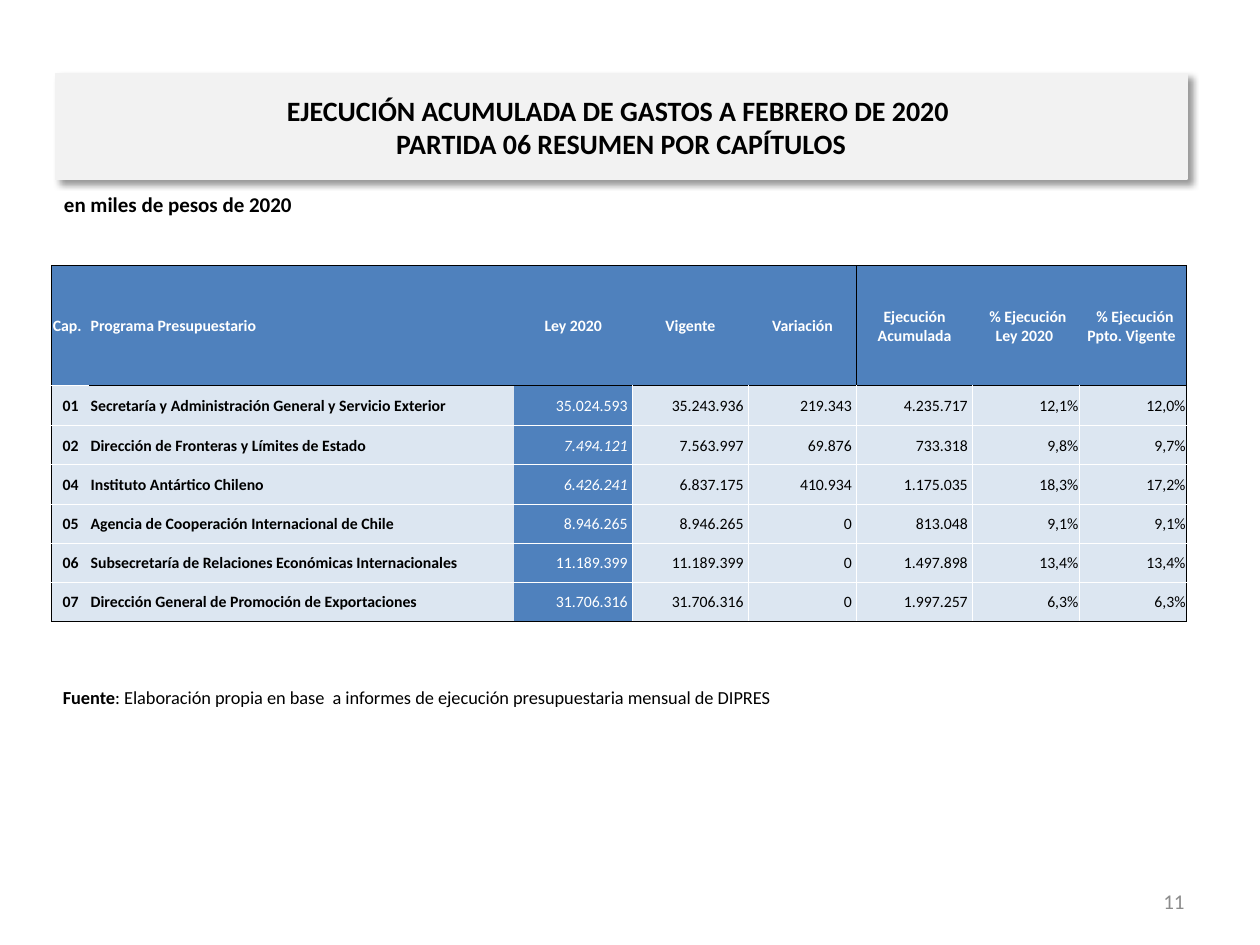
from dataclasses import dataclass
from typing import NamedTuple

from lxml import etree
from pptx import Presentation
from pptx.dml.color import RGBColor
from pptx.enum.text import MSO_ANCHOR, MSO_AUTO_SIZE, PP_ALIGN
from pptx.oxml.ns import qn
from pptx.util import Inches, Pt

LEFT, CENTER, RIGHT = PP_ALIGN.LEFT, PP_ALIGN.CENTER, PP_ALIGN.RIGHT
TOP, MIDDLE = MSO_ANCHOR.TOP, MSO_ANCHOR.MIDDLE
GROW = MSO_AUTO_SIZE.SHAPE_TO_FIT_TEXT
TITLE_ONLY = 5


@dataclass(frozen=True)
class Theme:
    font: str = "Calibri"
    black: str = "000000"
    white: str = "FFFFFF"
    gray: str = "8C8C8C"
    banner: str = "F2F2F2"
    accent: str = "4F81BD"
    pale: str = "DCE6F1"
    title_size: float = 16
    label_size: float = 12
    source_size: float = 10.5
    table_size: float = 9
    hairline: float = 0.5


class Box(NamedTuple):
    left: float
    top: float
    width: float
    height: float

    def emu(self) -> tuple:
        return tuple(Inches(v) for v in self)


class Column(NamedTuple):
    header: str
    width: float
    header_align: PP_ALIGN
    align: PP_ALIGN
    suffix: str = ""


class Chapter(NamedTuple):
    code: str
    program: str
    law: str
    current: str
    variation: str
    executed: str
    law_pct: str
    current_pct: str


THEME = Theme()
COLUMNS = [
    Column("Cap.", 0.3, LEFT, CENTER),
    Column("Programa Presupuestario", 3.37, LEFT, LEFT),
    Column("Ley 2020", 0.94, CENTER, RIGHT, " "),
    Column("Vigente", 0.92, CENTER, RIGHT, " "),
    Column("Variación", 0.86, CENTER, RIGHT, " "),
    Column("Ejecución Acumulada", 0.92, CENTER, RIGHT, " "),
    Column(" % Ejecución Ley 2020 ", 0.85, CENTER, RIGHT),
    Column(" % Ejecución Ppto. Vigente ", 0.85, CENTER, RIGHT),
]
CHAPTERS = [
    Chapter("01", "Secretaría y Administración General y Servicio Exterior",
            "35.024.593", "35.243.936", "219.343", "4.235.717", "12,1%", "12,0%"),
    Chapter("02", "Dirección de Fronteras y Límites de Estado",
            "7.494.121", "7.563.997", "69.876", "733.318", "9,8%", "9,7%"),
    Chapter("04", "Instituto Antártico Chileno",
            "6.426.241", "6.837.175", "410.934", "1.175.035", "18,3%", "17,2%"),
    Chapter("05", "Agencia de Cooperación Internacional de Chile",
            "8.946.265", "8.946.265", "0", "813.048", "9,1%", "9,1%"),
    Chapter("06", "Subsecretaría de Relaciones Económicas Internacionales",
            "11.189.399", "11.189.399", "0", "1.497.898", "13,4%", "13,4%"),
    Chapter("07", "Dirección General de Promoción de Exportaciones",
            "31.706.316", "31.706.316", "0", "1.997.257", "6,3%", "6,3%"),
]
ROW_HEIGHTS = [0.95, 0.32] + [0.31] * (len(CHAPTERS) - 1)
LAST_ROW, LAST_COL = len(CHAPTERS), len(COLUMNS) - 1
LAW_COL, VARIATION_COL = 2, 4
ITALIC_CODES = {"02", "04"}


def set_font(font, size: float, color: str, bold: bool = False, italic: bool = False) -> None:
    font.name = THEME.font
    font.size = Pt(size)
    font.bold = bold
    font.italic = italic
    font.color.rgb = RGBColor.from_string(color)


def set_fill(fill, color: str) -> None:
    fill.solid()
    fill.fore_color.rgb = RGBColor.from_string(color)


def add_color(parent, color: str):
    return etree.SubElement(parent, qn("a:srgbClr"), val=color)


def add_shadow(sp) -> None:
    sp.shadow.inherit = False
    effects = sp._element.spPr.find(qn("a:effectLst"))
    shadow = etree.SubElement(effects, qn("a:outerShdw"), blurRad=str(Pt(4)), dist=str(Pt(3)),
                              dir="2700000", algn="tl", rotWithShape="0")
    etree.SubElement(add_color(shadow, THEME.black), qn("a:alpha"), val="40000")


def add_title(s, box: Box, text: str) -> None:
    sp = s.shapes.title
    sp.left, sp.top, sp.width, sp.height = box.emu()
    set_fill(sp.fill, THEME.banner)
    set_fill(sp.line.fill, THEME.banner)
    sp.line.width = Pt(0.75)
    add_shadow(sp)
    tf = sp.text_frame
    tf.word_wrap, tf.auto_size, tf.vertical_anchor = True, GROW, MIDDLE
    tf.margin_left = tf.margin_right = Inches(0.11)
    p = tf.paragraphs[0]
    p.text = text
    p.alignment = CENTER
    set_font(p.font, THEME.title_size, THEME.black, bold=True)


def add_text(s, box: Box, text: str, size: float, color: str, bold: bool = False,
             align: PP_ALIGN = LEFT, anchor: MSO_ANCHOR = TOP, lead: str = "") -> None:
    tf = s.shapes.add_textbox(*box.emu()).text_frame
    tf.word_wrap = True
    tf.vertical_anchor = anchor
    p = tf.paragraphs[0]
    p.alignment = align
    set_font(p.font, size, color, bold)
    if lead:
        r = p.add_run()
        r.text = lead
        r.font.bold = True
    p.add_run().text = text


def cell_borders(row: int, col: int) -> dict[str, str | None]:
    black, white = THEME.black, THEME.white
    if row == 0:
        return {
            "L": black if col in (0, VARIATION_COL + 1) else None,
            "R": black if col in (VARIATION_COL, LAST_COL) else None,
            "T": black,
            "B": white if col == 0 else black,
        }
    return {
        "L": black if col == 0 else white if col > LAW_COL else None,
        "R": black if col == LAST_COL else white if col >= LAW_COL else None,
        "T": black if row == 1 and col > 0 else white,
        "B": black if row == LAST_ROW else white,
    }


def draw_borders(cell, borders: dict[str, str | None]) -> None:
    tc_pr = cell._tc.get_or_add_tcPr()
    for i, (side, color) in enumerate(borders.items()):
        ln = etree.Element(qn(f"a:ln{side}"), w=str(Pt(THEME.hairline)))
        if color:
            add_color(etree.SubElement(ln, qn("a:solidFill")), color)
        else:
            etree.SubElement(ln, qn("a:noFill"))
        tc_pr.insert(i, ln)


def fill_cell(cell, row: int, col: int) -> None:
    column = COLUMNS[col]
    header = row == 0
    chapter = None if header else CHAPTERS[row - 1]
    accented = header or col == LAW_COL
    cell.margin_left = cell.margin_right = cell.margin_top = Inches(0.01)
    cell.margin_bottom = 0
    cell.vertical_anchor = MIDDLE
    set_fill(cell.fill, THEME.accent if accented else THEME.pale)
    p = cell.text_frame.paragraphs[0]
    p.text = column.header if header else chapter[col] + column.suffix
    p.alignment = column.header_align if header else column.align
    set_font(p.font, THEME.table_size, THEME.white if accented else THEME.black,
             bold=header or col < LAW_COL,
             italic=not header and col == LAW_COL and chapter.code in ITALIC_CODES)
    draw_borders(cell, cell_borders(row, col))


def add_budget_table(s, box: Box) -> None:
    table = s.shapes.add_table(len(ROW_HEIGHTS), len(COLUMNS), *box.emu()).table
    table.first_row = table.horz_banding = False
    for col, column in enumerate(COLUMNS):
        table.columns[col].width = Inches(column.width)
    for row, height in enumerate(ROW_HEIGHTS):
        table.rows[row].height = Inches(height)
        for col in range(len(COLUMNS)):
            fill_cell(table.cell(row, col), row, col)


def main() -> None:
    prs = Presentation()
    prs.slide_width, prs.slide_height = Inches(10), Inches(7.5)
    s = prs.slides.add_slide(prs.slide_layouts[TITLE_ONLY])
    add_title(s, Box(0.44, 0.68, 8.98, 0.65),
              "EJECUCIÓN ACUMULADA DE GASTOS A FEBRERO DE 2020 \vPARTIDA 06 RESUMEN POR CAPÍTULOS")
    add_text(s, Box(0.41, 1.47, 9, 0.5), "en miles de pesos de 2020",
             THEME.label_size, THEME.black, bold=True)
    add_budget_table(s, Box(0.41, 2.11, 9.01, 2.82))
    add_text(s, Box(0.4, 5.4, 9.19, 0.4),
             ": Elaboración propia en base  a informes de ejecución presupuestaria mensual de DIPRES",
             THEME.source_size, THEME.black, lead="Fuente")
    add_text(s, Box(7.17, 6.95, 2.33, 0.4), "11", THEME.label_size, THEME.gray,
             align=RIGHT, anchor=MIDDLE)
    prs.save("out.pptx")


if __name__ == "__main__":
    main()
